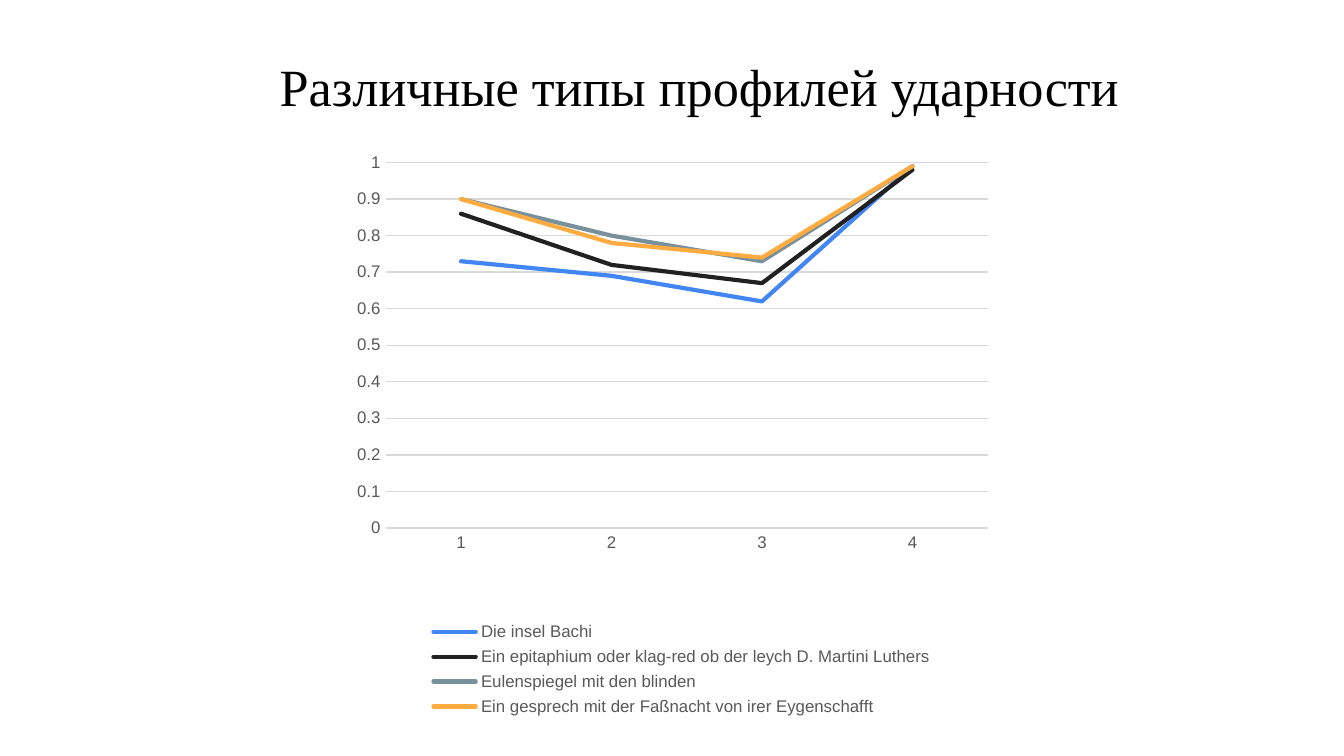
from lxml.etree import SubElement
from pptx import Presentation
from pptx.chart.data import CategoryChartData
from pptx.dml.color import RGBColor
from pptx.enum.chart import XL_CHART_TYPE, XL_LEGEND_POSITION, XL_TICK_MARK
from pptx.enum.text import MSO_ANCHOR, PP_ALIGN
from pptx.oxml.ns import qn
from pptx.util import Inches, Pt

COLORS = {
    "background": "FFFFFF",
    "title": "000000",
    "label": "595959",
    "grid": "D9D9D9",
    "blue": "4285F4",
    "black": "212121",
    "gray": "78909C",
    "orange": "FFAB40",
}

# Stress profiles: name, colour, values by position
PROFILES = [
    ("Die insel Bachi", "blue", (0.73, 0.69, 0.62, 0.99)),
    ("Ein epitaphium oder klag-red ob der leych D. Martini Luthers",
     "black", (0.86, 0.72, 0.67, 0.98)),
    ("Eulenspiegel mit den blinden", "gray", (0.9, 0.8, 0.73, 0.99)),
    ("Ein gesprech mit der Faßnacht von irer Eygenschafft",
     "orange", (0.9, 0.78, 0.74, 0.99)),
]


class SlideBuilder:
    title_font = "Times New Roman"
    chart_font = "Arial"

    def __init__(self, slide):
        self.slide = slide
        fill = slide.background.fill
        fill.solid()
        fill.fore_color.rgb = self.color("background")

    def color(self, name):
        return RGBColor.from_string(COLORS[name])

    def style_font(self, font, name, size, color):
        font.name = name
        font.size = Pt(size)
        font.color.rgb = self.color(color)

    def style_line(self, line, color, width):
        line.color.rgb = self.color(color)
        line.width = Pt(width)

    def add_title(self, text, left, top, width, height):
        shape = self.slide.shapes.add_textbox(
            Inches(left), Inches(top), Inches(width), Inches(height))
        frame = shape.text_frame
        frame.word_wrap = True
        frame.vertical_anchor = MSO_ANCHOR.TOP
        frame.margin_left = frame.margin_right = Inches(0.1)
        frame.margin_top = frame.margin_bottom = Inches(0.1)
        paragraph = frame.paragraphs[0]
        paragraph.alignment = PP_ALIGN.CENTER
        run = paragraph.add_run()
        run.text = text
        self.style_font(run.font, self.title_font, 28, "title")

    def add_line_chart(self, categories, profiles, left, top, width, height):
        data = CategoryChartData()
        data.categories = categories
        for name, _, values in profiles:
            data.add_series(name, values)
        chart_frame = self.slide.shapes.add_chart(
            XL_CHART_TYPE.LINE, Inches(left), Inches(top),
            Inches(width), Inches(height), data)
        chart = chart_frame.chart
        chart.has_title = False
        self.style_font(chart.font, self.chart_font, 10, "title")

        # Series lines with round ends
        plot = chart.plots[0]
        plot.vary_by_categories = False
        for series, (_, color, _) in zip(plot.series, profiles):
            series.smooth = False
            self.style_line(series.format.line, color, 2.25)
            outline = series.format._element if hasattr(
                series.format, "_element") else series._element
            outline.find(".//" + qn("a:ln")).set("cap", "rnd")

        # Axes and grid
        for axis in (chart.category_axis, chart.value_axis):
            axis.major_tick_mark = axis.minor_tick_mark = XL_TICK_MARK.NONE
            self.style_font(axis.tick_labels.font, self.chart_font, 9, "label")
        self.style_line(chart.category_axis.format.line, "grid", 0.75)
        values_axis = chart.value_axis
        values_axis.minimum_scale = 0
        values_axis.maximum_scale = 1
        values_axis.major_unit = 0.1
        values_axis.tick_labels.number_format = "General"
        values_axis.tick_labels.number_format_is_linked = False
        values_axis.format.line.fill.background()
        self.style_line(values_axis.major_gridlines.format.line, "grid", 0.75)

        # Legend
        chart.has_legend = True
        chart.legend.position = XL_LEGEND_POSITION.BOTTOM
        chart.legend.include_in_layout = False
        self.style_font(chart.legend.font, self.chart_font, 9, "label")
        return chart_frame

    def place_plot(self, chart_frame, left, top, width, height):
        """Fix the inner plot area, in inches from the chart's corner."""
        plot_area = chart_frame.chart.plots[0]._element.getparent()
        for old in plot_area.findall(qn("c:layout")):
            plot_area.remove(old)
        layout = SubElement(plot_area, qn("c:layout"))
        plot_area.insert(0, layout)
        manual = SubElement(layout, qn("c:manualLayout"))
        settings = {
            "layoutTarget": "inner", "xMode": "edge", "yMode": "edge",
            "x": Inches(left) / chart_frame.width,
            "y": Inches(top) / chart_frame.height,
            "w": Inches(width) / chart_frame.width,
            "h": Inches(height) / chart_frame.height,
        }
        for tag, value in settings.items():
            SubElement(manual, qn(f"c:{tag}")).set("val", str(value))


def main():
    # Widescreen slide, 16:9
    presentation = Presentation()
    presentation.slide_width = Inches(10)
    presentation.slide_height = Inches(10) * 9 // 16
    slide = presentation.slides.add_slide(presentation.slide_layouts[6])
    builder = SlideBuilder(slide)

    builder.add_title("Различные типы профилей ударности ",
                      0.69, 0.3, 9.12, 1.09)
    chart_frame = builder.add_line_chart(("1", "2", "3", "4"), PROFILES,
                                         2.57, 1.1, 5, 4.27)
    builder.place_plot(chart_frame, 0.3, 0.11, 4.48, 2.72)

    presentation.save("out.pptx")


if __name__ == "__main__":
    main()
